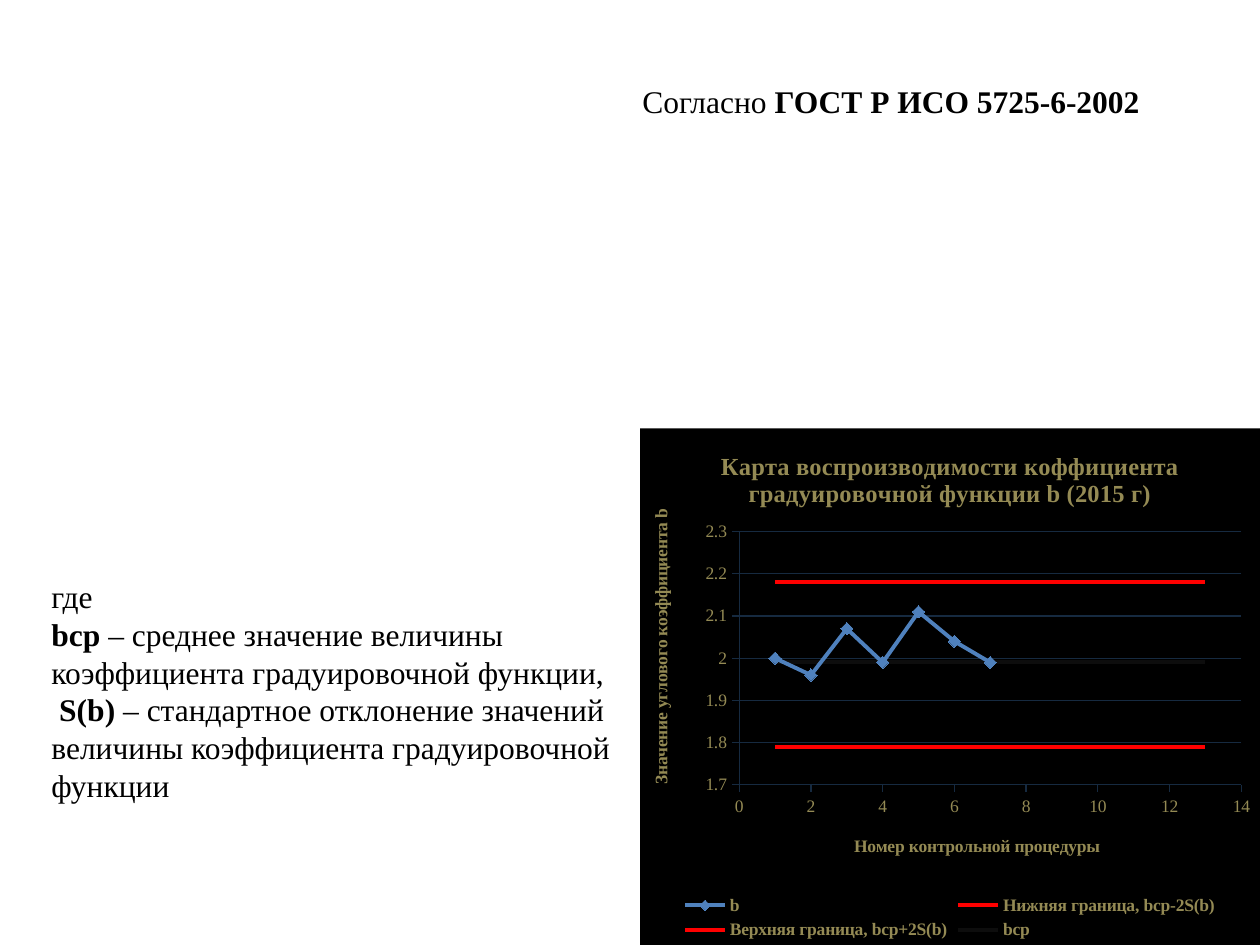
from dataclasses import dataclass

from lxml import etree
from pptx import Presentation
from pptx.chart.data import XyChartData
from pptx.dml.color import RGBColor
from pptx.enum.chart import XL_CHART_TYPE, XL_LEGEND_POSITION, XL_MARKER_STYLE, XL_TICK_MARK
from pptx.enum.text import MSO_ANCHOR
from pptx.oxml import parse_xml
from pptx.oxml.ns import nsdecls, qn
from pptx.util import Inches, Pt

SMOOTH_SCATTER = XL_CHART_TYPE.XY_SCATTER_SMOOTH
LEGEND_BOTTOM = XL_LEGEND_POSITION.BOTTOM
DIAMOND = XL_MARKER_STYLE.DIAMOND
NO_MARKER = XL_MARKER_STYLE.NONE
TICK_OUTSIDE = XL_TICK_MARK.OUTSIDE
ANCHOR_TOP = MSO_ANCHOR.TOP
ANCHOR_BOTTOM = MSO_ANCHOR.BOTTOM


@dataclass(frozen=True)
class Theme:
    font: str = "Times New Roman"
    text: str = "000000"
    chart_background: str = "000000"
    chart_text: str = "948A54"
    grid: str = "162A40"
    measured: str = "4F81BD"
    limit: str = "FF0000"
    mean: str = "0D0D0D"
    body_size: int = 18
    title_size: int = 14
    label_size: int = 10
    series_width: float = 2.25
    grid_width: float = 0.75


class SlideBuilder:
    def __init__(self, slide, theme):
        self.slide = slide
        self.theme = theme

    def style_font(self, font, size, color, bold=None):
        font.name = self.theme.font
        font.size = Pt(size)
        font.color.rgb = RGBColor.from_string(color)
        font.bold = bold

    def style_line(self, line, color, width):
        line.color.rgb = RGBColor.from_string(color)
        line.width = Pt(width)

    def add_text(self, left, top, width, height, paragraphs, anchor=ANCHOR_TOP):
        """Each paragraph is a list of (text, bold) pairs."""
        box = self.slide.shapes.add_textbox(Inches(left), Inches(top), Inches(width), Inches(height))
        frame = box.text_frame
        frame.word_wrap = True
        frame.vertical_anchor = anchor
        for index, runs in enumerate(paragraphs):
            paragraph = frame.add_paragraph() if index else frame.paragraphs[0]
            self.style_font(paragraph.font, self.theme.body_size, self.theme.text)
            for text, bold in runs:
                run = paragraph.add_run()
                run.text = text
                run.font.bold = bold

    def set_layout(self, element, position, **fractions):
        """Place a chart part by fractions of the chart area."""
        for old_layout in element.findall(qn("c:layout")):
            element.remove(old_layout)
        layout = etree.Element(qn("c:layout"))
        manual = etree.SubElement(layout, qn("c:manualLayout"))
        if "w" in fractions:
            etree.SubElement(manual, qn("c:layoutTarget"), val="inner")
        for mode in ("xMode", "yMode"):
            etree.SubElement(manual, qn(f"c:{mode}"), val="edge")
        for name, value in fractions.items():
            etree.SubElement(manual, qn(f"c:{name}"), val=str(value))
        element.insert(position, layout)

    def set_title(self, title, text, size):
        title.text_frame.text = text
        self.style_font(title.text_frame.paragraphs[0].font, size, self.theme.chart_text, True)

    def style_axis(self, axis, title, minimum, maximum, step, x, y):
        theme = self.theme
        axis.minimum_scale, axis.maximum_scale, axis.major_unit = minimum, maximum, step
        axis.major_tick_mark = TICK_OUTSIDE
        self.style_font(axis.tick_labels.font, theme.label_size, theme.chart_text)
        axis.tick_labels.number_format = "General"
        axis.tick_labels.number_format_is_linked = False
        self.style_line(axis.format.line, theme.grid, theme.grid_width)
        self.set_title(axis.axis_title, title, theme.label_size)
        self.set_layout(axis.axis_title._element, 1, x=x, y=y)

    def style_series(self, series, color, marker):
        series.smooth = True
        self.style_line(series.format.line, color, self.theme.series_width)
        series.marker.style = marker
        if marker != NO_MARKER:
            series.marker.size = 7
            series.marker.format.fill.solid()
            series.marker.format.fill.fore_color.rgb = RGBColor.from_string(color)
            self.style_line(series.marker.format.line, color, self.theme.grid_width)

    def drop_empty_points(self, chart_space):
        """Leave gaps where a procedure has no value yet."""
        for point in list(chart_space.iter(qn("c:pt"))):
            if point.findtext(qn("c:v")) in (None, "", "None"):
                point.getparent().remove(point)

    def add_control_chart(self, left, top, width, height, title, series_list):
        """Each series is (name, values, color, marker); x counts from 1."""
        theme = self.theme
        data = XyChartData()
        for name, values, _, _ in series_list:
            series = data.add_series(name)
            for number, value in enumerate(values, start=1):
                series.add_data_point(number, value)
        chart = self.slide.shapes.add_chart(
            SMOOTH_SCATTER, Inches(left), Inches(top), Inches(width), Inches(height), data
        ).chart
        chart_space = chart._chartSpace
        self.drop_empty_points(chart_space)
        self.style_font(chart.font, theme.label_size, theme.chart_text)
        self.set_title(chart.chart_title, title, theme.title_size)

        plot = chart.plots[0]
        plot.vary_by_categories = False
        for series, (_, _, color, marker) in zip(plot.series, series_list):
            self.style_series(series, color, marker)

        self.style_axis(chart.category_axis, "Номер контрольной процедуры", 0, 14, 2, 0.34, 0.78)
        self.style_axis(chart.value_axis, "Значение углового коэффициента b", 1.7, 2.3, 0.1, 0.01, 0.15)
        chart.category_axis.has_major_gridlines = False
        chart.value_axis.has_major_gridlines = True
        self.style_line(chart.value_axis.major_gridlines.format.line, theme.grid, theme.grid_width)

        chart.has_legend = True
        chart.legend.position = LEGEND_BOTTOM
        chart.legend.include_in_layout = False
        self.style_font(chart.legend.font, theme.label_size, theme.chart_text, True)

        chart_element = chart_space.find(qn("c:chart"))
        self.set_layout(chart_element.find(qn("c:plotArea")), 0, x=0.16, y=0.2, w=0.81, h=0.49)
        chart_element.addnext(parse_xml(
            f'<c:spPr {nsdecls("c", "a")}><a:solidFill><a:srgbClr val="{theme.chart_background}"/>'
            "</a:solidFill><a:ln><a:noFill/></a:ln></c:spPr>"
        ))


def main():
    presentation = Presentation()
    presentation.slide_width, presentation.slide_height = Inches(10), Inches(7.5)
    theme = Theme()
    builder = SlideBuilder(presentation.slides.add_slide(presentation.slide_layouts[6]), theme)

    procedures = 13
    measured = [2, 1.96, 2.07, 1.99, 2.11, 2.04, 1.99]
    measured += [None] * (procedures - len(measured))
    builder.add_control_chart(
        5.08, 3.4, 4.92, 4.1,
        "Карта воспроизводимости коффициента градуировочной функции b (2015 г)",
        [
            ("b", measured, theme.measured, DIAMOND),
            ("Нижняя граница, bср-2S(b)", [1.79] * procedures, theme.limit, NO_MARKER),
            ("Верхняя граница, bср+2S(b)", [2.18] * procedures, theme.limit, NO_MARKER),
            ("bср", [1.99] * procedures, theme.mean, NO_MARKER),
        ],
    )
    builder.add_text(0.31, 4.53, 4.77, 1.92, [
        [("где", False)],
        [("bср ", True), ("– среднее значение величины коэффициента градуировочной функции,", False)],
        [(" S(b)", True),
         (" – стандартное отклонение значений величины коэффициента градуировочной функции", False)],
    ])
    builder.add_text(5, 0.29, 5, 0.71, [
        [("Согласно ", False), ("ГОСТ Р ИСО 5725-6-2002", True)],
    ], anchor=ANCHOR_BOTTOM)
    presentation.save("out.pptx")


if __name__ == "__main__":
    main()
